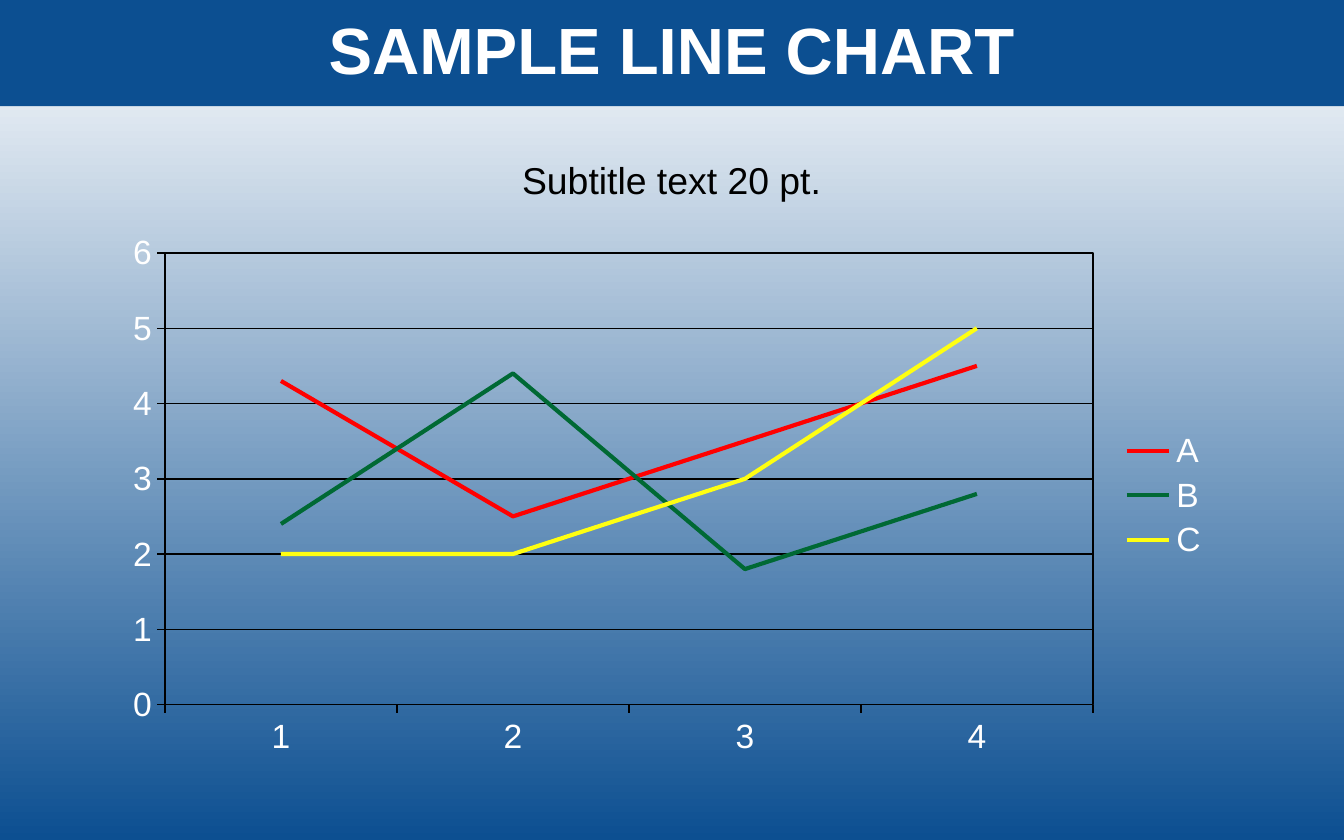
from dataclasses import dataclass

from lxml import etree
from pptx import Presentation
from pptx.chart.data import CategoryChartData
from pptx.dml.color import RGBColor
from pptx.enum import chart as chart_enum, shapes, text
from pptx.oxml import parse_xml
from pptx.oxml.ns import nsdecls, qn
from pptx.util import Pt

BLUE = RGBColor(0x0C, 0x4F, 0x91)
WHITE = RGBColor(0xFF, 0xFF, 0xFF)
BLACK = RGBColor(0x00, 0x00, 0x00)
RED = RGBColor(0xFF, 0x00, 0x00)
GREEN = RGBColor(0x00, 0x69, 0x34)
YELLOW = RGBColor(0xFF, 0xFF, 0x11)
FONT = "Arial"
SLIDE_WIDTH, SLIDE_HEIGHT = Pt(720), Pt(450)


@dataclass(frozen=True)
class LineSeries:
    name: str
    values: tuple[float, ...]
    color: RGBColor


CATEGORIES = ("1", "2", "3", "4")
SERIES = (
    LineSeries("A", (4.3, 2.5, 3.5, 4.5), RED),
    LineSeries("B", (2.4, 4.4, 1.8, 2.8), GREEN),
    LineSeries("C", (2, 2, 3, 5), YELLOW),
)


def set_font(font, size: float, color: RGBColor, bold: bool = False) -> None:
    font.name = FONT
    font.size = Pt(size)
    font.bold = bold
    font.color.rgb = color


def set_line(line, color: RGBColor, width: float) -> None:
    line.color.rgb = color
    line.width = Pt(width)


def write_centred(shape, wording: str, size: float, color: RGBColor, bold: bool = False) -> None:
    frame = shape.text_frame
    frame.word_wrap = True
    frame.vertical_anchor = text.MSO_ANCHOR.MIDDLE
    frame.text = wording
    paragraph = frame.paragraphs[0]
    paragraph.alignment = text.PP_ALIGN.CENTER
    paragraph.line_spacing = 0.9
    set_font(paragraph.runs[0].font, size, color, bold)


def paint_background(slide) -> None:
    fill = slide.background.fill
    fill.gradient()
    fill.gradient_angle = 270
    for stop, color in zip(fill.gradient_stops, (WHITE, BLUE)):
        stop.color.rgb = color


def add_title(slide) -> None:
    banner = slide.shapes.add_shape(shapes.MSO_SHAPE.RECTANGLE, 0, 0, SLIDE_WIDTH, Pt(56.9))
    banner.shadow.inherit = False
    banner.fill.solid()
    banner.fill.fore_color.rgb = BLUE
    banner.line.fill.background()
    frame = banner.text_frame
    frame.margin_left = frame.margin_right = Pt(3.6)
    frame.margin_top = frame.margin_bottom = Pt(3.6)
    write_centred(banner, "SAMPLE LINE CHART", 35, WHITE, bold=True)


def add_subtitle(slide) -> None:
    subtitle = slide.shapes.add_textbox(Pt(19.6), Pt(82), Pt(680.6), Pt(31))
    write_centred(subtitle, "Subtitle text 20 pt.", 20, BLACK)


def frame_plot_area(chart) -> None:
    """Place the plot area within the chart and outline it in black."""
    plot_area = chart.plots[0]._element.getparent()
    for layout in plot_area.findall(qn("c:layout")):
        plot_area.remove(layout)
    plot_area.insert(0, parse_xml(
        f'<c:layout {nsdecls("c")}><c:manualLayout><c:layoutTarget val="inner"/>'
        '<c:xMode val="edge"/><c:yMode val="edge"/><c:x val="0.048"/><c:y val="0.055"/>'
        '<c:w val="0.835"/><c:h val="0.83"/></c:manualLayout></c:layout>'))
    properties = etree.SubElement(plot_area, qn("c:spPr"))
    etree.SubElement(properties, qn("a:noFill"))
    outline = etree.SubElement(properties, qn("a:ln"), w=str(Pt(0.75)))
    fill = etree.SubElement(outline, qn("a:solidFill"))
    etree.SubElement(fill, qn("a:srgbClr"), val=str(BLACK))


def add_line_chart(slide) -> None:
    data = CategoryChartData()
    data.categories = CATEGORIES
    for item in SERIES:
        data.add_series(item.name, item.values)
    chart = slide.shapes.add_chart(
        chart_enum.XL_CHART_TYPE.LINE, Pt(59.8), Pt(119.5), Pt(595.4), Pt(291.6), data).chart
    chart.has_title = False
    set_font(chart.font, 18, WHITE)

    for axis in (chart.category_axis, chart.value_axis):
        axis.major_tick_mark = chart_enum.XL_TICK_MARK.OUTSIDE
        axis.minor_tick_mark = chart_enum.XL_TICK_MARK.NONE
        set_line(axis.format.line, BLACK, 0.75)
        set_font(axis.tick_labels.font, 18, WHITE)
    value_axis = chart.value_axis
    value_axis.minimum_scale, value_axis.maximum_scale, value_axis.major_unit = 0, 6, 1
    set_line(value_axis.major_gridlines.format.line, BLACK, 0.75)

    chart.has_legend = True
    chart.legend.position = chart_enum.XL_LEGEND_POSITION.RIGHT
    chart.legend.include_in_layout = False
    set_font(chart.legend.font, 18, WHITE)

    plot = chart.plots[0]
    plot.vary_by_categories = False
    for series, item in zip(plot.series, SERIES):
        series.smooth = False
        series.marker.style = chart_enum.XL_MARKER_STYLE.NONE
        set_line(series.format.line, item.color, 2.25)
    frame_plot_area(chart)


def main() -> None:
    presentation = Presentation()
    presentation.slide_width, presentation.slide_height = SLIDE_WIDTH, SLIDE_HEIGHT
    slide = presentation.slides.add_slide(presentation.slide_layouts[6])
    paint_background(slide)
    add_title(slide)
    add_subtitle(slide)
    add_line_chart(slide)
    presentation.save("out.pptx")


if __name__ == "__main__":
    main()
